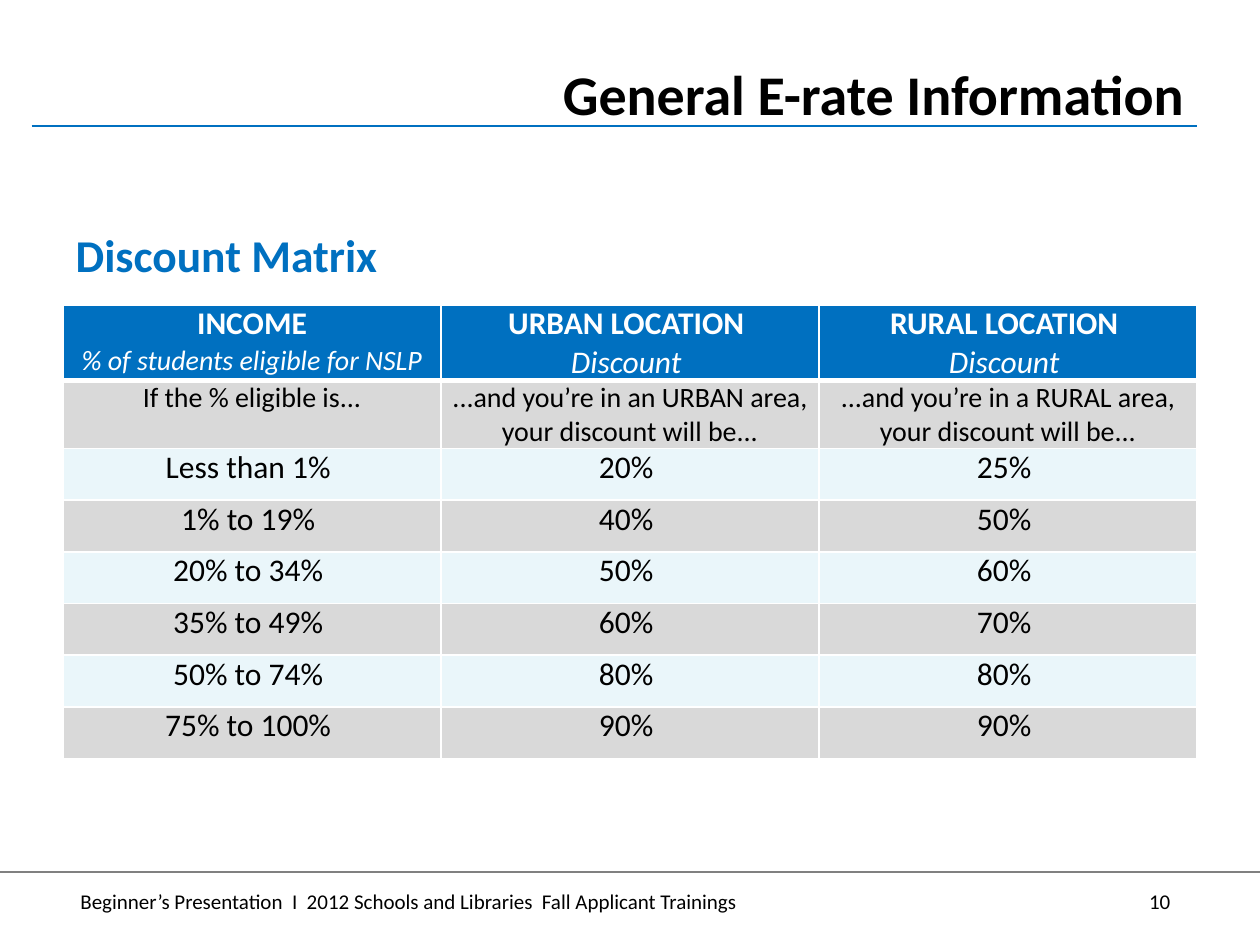
from dataclasses import dataclass

from lxml.etree import SubElement
from pptx import Presentation
from pptx.dml.color import RGBColor as Color
from pptx.enum.shapes import MSO_CONNECTOR as Connector
from pptx.enum.text import MSO_ANCHOR as Anchor, MSO_AUTO_SIZE as AutoSize, PP_ALIGN as Align
from pptx.oxml.ns import qn
from pptx.util import Inches, Pt


@dataclass(frozen=True)
class Theme:
    font: str = "Calibri"
    blue: str = "0070C0"
    black: str = "000000"
    white: str = "FFFFFF"
    gray: str = "D9D9D9"
    pale: str = "EAF6FA"
    rule: str = "808080"
    title: int = 32
    heading: int = 26
    table: int = 18
    note: int = 16
    footer: int = 12


THEME = Theme()

HEADERS = [
    ("INCOME", "% of students eligible for NSLP", THEME.note),
    ("URBAN LOCATION", "Discount", THEME.table),
    ("RURAL LOCATION", "Discount", THEME.table),
]
NOTES = [
    "If the % eligible is...",
    "...and you’re in an URBAN area, your discount will be...",
    "...and you’re in a RURAL area, your discount will be...",
]
DISCOUNTS = [
    ("Less than 1%", "20%", "25%"),
    ("1% to 19%", "40%", "50%"),
    ("20% to 34%", "50%", "60%"),
    ("35% to 49%", "60%", "70%"),
    ("50% to 74%", "80%", "80%"),
    ("75% to 100%", "90%", "90%"),
]


def add_span(para, text, size, color=THEME.black, bold=False, italic=False):
    span = para.add_run()
    span.text = text
    font = span.font
    font.name, font.size = THEME.font, Pt(size)
    font.bold, font.italic = bold, italic
    font.color.rgb = Color.from_string(color)


def place(box, left, top, width, height):
    box.left, box.top = Inches(left), Inches(top)
    box.width, box.height = Inches(width), Inches(height)


def fill_placeholder(box, text, size, color, align):
    frame = box.text_frame
    frame.word_wrap, frame.auto_size = True, AutoSize.NONE
    frame.vertical_anchor = Anchor.TOP
    para = frame.paragraphs[0]
    props = para._p.get_or_add_pPr()
    props.set("marL", "0")
    props.set("indent", "0")
    SubElement(props, qn("a:buNone"))
    para.alignment, para.space_before = align, Pt(0)
    add_span(para, text, size, color, bold=True)


def add_rule(page, left, right, top, color, width):
    rule = page.shapes.add_connector(
        Connector.STRAIGHT, Inches(left), Inches(top), Inches(right), Inches(top))
    rule.line.color.rgb = Color.from_string(color)
    rule.line.width = Pt(width)
    SubElement(rule._element.spPr, qn("a:effectLst"))


def add_footer(page, text, number):
    box = page.shapes.add_textbox(Inches(0.54), Inches(7), Inches(8.96), Inches(0.34))
    box.text_frame.word_wrap = True
    para = box.text_frame.paragraphs[0]
    tabs = SubElement(para._p.get_or_add_pPr(), qn("a:tabLst"))
    SubElement(tabs, qn("a:tab"), pos=str(Inches(8.65)), algn="r")
    add_span(para, f"{text}\t{number}", THEME.footer)


def set_borders(cell, top=1, bottom=1):
    props = cell._tc.get_or_add_tcPr()
    for side, width in (("L", 1), ("R", 1), ("T", top), ("B", bottom)):
        line = SubElement(props, qn(f"a:ln{side}"), w=str(Pt(width)))
        SubElement(SubElement(line, qn("a:solidFill")), qn("a:srgbClr"), val=THEME.white)


def style_cell(cell, fill, right=0.0, **borders):
    """Style a cell and return its centred paragraph."""
    set_borders(cell, **borders)
    cell.fill.solid()
    cell.fill.fore_color.rgb = Color.from_string(fill)
    cell.margin_left = cell.margin_top = cell.margin_bottom = 0
    cell.margin_right = Inches(right)
    para = cell.text_frame.paragraphs[0]
    para.alignment = Align.CENTER
    return para


def add_discount_table(page):
    heights = [0.6, 0.54] + [0.41] * len(DISCOUNTS)
    table = page.shapes.add_table(
        len(heights), len(HEADERS), Inches(0.5), Inches(2.42),
        Inches(9), Inches(sum(heights))).table
    table.horz_banding = False
    for row, height in zip(table.rows, heights):
        row.height = Inches(height)
    # Header row
    for col, (name, detail, size) in enumerate(HEADERS):
        para = style_cell(table.cell(0, col), THEME.blue, right=0.06 if col else 0, bottom=3)
        add_span(para, name, THEME.table, THEME.white, bold=True)
        para.add_line_break()
        add_span(para, detail, size, THEME.white, italic=True)
    # Explanatory row
    for col, note in enumerate(NOTES):
        add_span(style_cell(table.cell(1, col), THEME.gray, top=3), note, THEME.note)
    # Discount rows in alternating bands
    for row, values in enumerate(DISCOUNTS, start=2):
        band = THEME.gray if row % 2 else THEME.pale
        for col, value in enumerate(values):
            add_span(style_cell(table.cell(row, col), band, right=0.06), value, THEME.table)


def main():
    deck = Presentation()
    deck.slide_width, deck.slide_height = Inches(10), Inches(7.5)
    page = deck.slides.add_slide(deck.slide_layouts[1])

    # Footer and rules
    add_footer(page, "Beginner’s Presentation  I  2012 Schools and Libraries  "
                     "Fall Applicant Trainings", 10)
    add_rule(page, 0, 10, 6.92, THEME.rule, 0.75)
    add_rule(page, 0.25, 9.5, 1, THEME.blue, 1.25)

    # Title and heading
    title, heading = page.shapes.title, page.placeholders[1]
    place(title, 2.75, 0.42, 6.75, 0.58)
    fill_placeholder(title, "General E-rate Information", THEME.title, THEME.black, Align.RIGHT)
    place(heading, 0.5, 1.75, 9, 0.67)
    fill_placeholder(heading, "Discount Matrix", THEME.heading, THEME.blue, Align.LEFT)

    # Discount matrix
    add_discount_table(page)
    deck.save("out.pptx")


if __name__ == "__main__":
    main()
